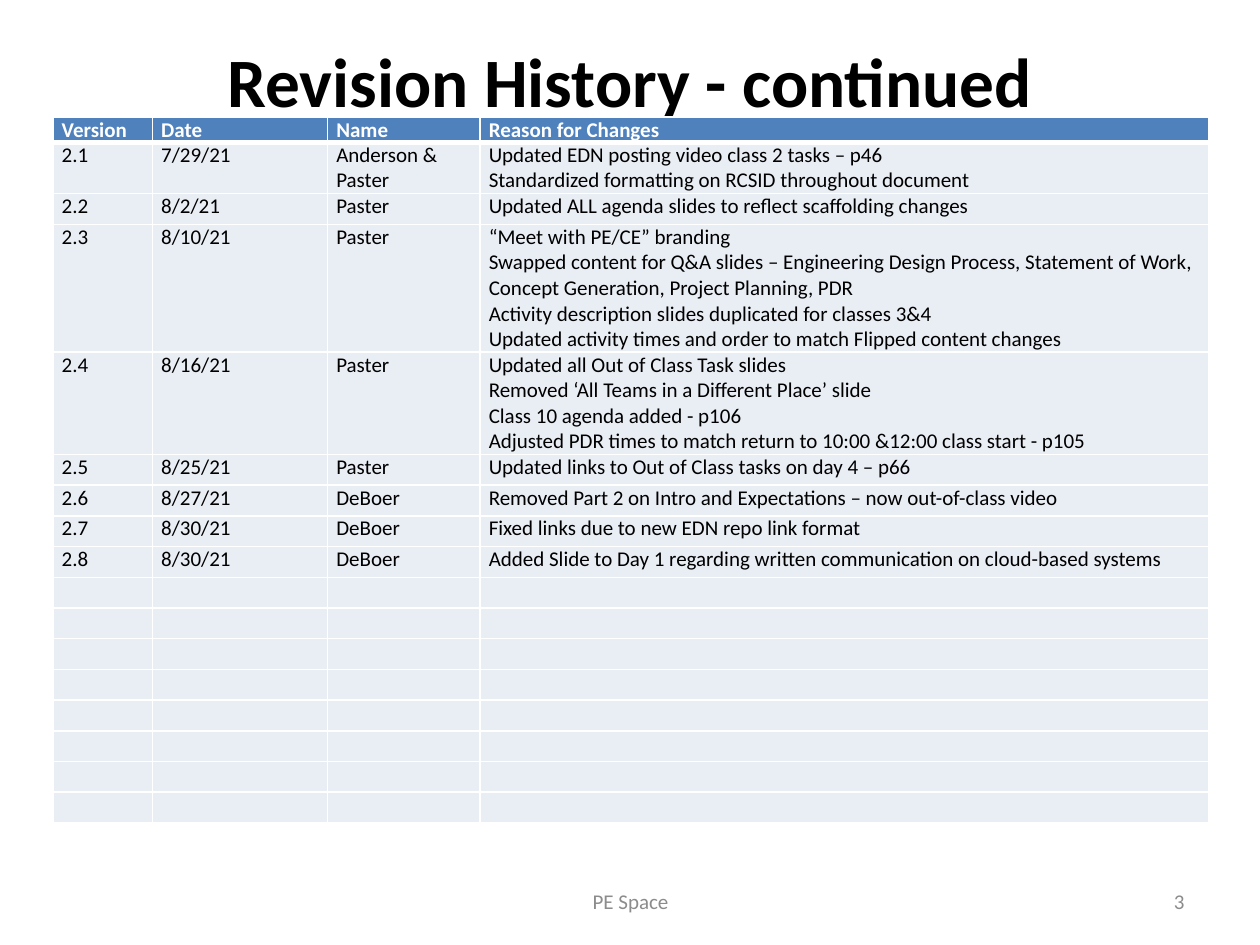
from lxml import etree
from pptx import Presentation
from pptx.dml.color import RGBColor
from pptx.enum.text import MSO_ANCHOR, PP_ALIGN
from pptx.oxml.ns import qn
from pptx.util import Inches, Pt

LEFT, MID, RIGHT = PP_ALIGN.LEFT, PP_ALIGN.CENTER, PP_ALIGN.RIGHT
TOP, CENTER = MSO_ANCHOR.TOP, MSO_ANCHOR.MIDDLE

COLORS = {
    "black": "000000",
    "white": "FFFFFF",
    "head": "4F81BD",
    "body": "E9EDF4",
    "gray": "8C8C8C",
}
WIDTHS = [0.79, 1.39, 1.21, 5.78]
HEAD_H, ROW_H, LINE_H = 0.2, 0.244, 0.203
SPARE = 8  # empty rows left for later versions

HEADS = ("Version", "Date", "Name", "Reason for Changes")
# Each entry: version, date, name, reasons, number of text lines
LOG = [
    ("2.1", "7/29/21", "Anderson & Paster",
     "Updated EDN posting video class 2 tasks – p46\n"
     "Standardized formatting on RCSID throughout document", 2),
    ("2.2", "8/2/21", "Paster",
     "Updated ALL agenda slides to reflect scaffolding changes", 1),
    ("2.3", "8/10/21", "Paster",
     "“Meet with PE/CE” branding\n"
     "Swapped content for Q&A slides – Engineering Design Process, "
     "Statement of Work, Concept Generation, Project Planning, PDR\n"
     "Activity description slides duplicated for classes 3&4\n"
     "Updated activity times and order to match Flipped content changes", 5),
    ("2.4", "8/16/21", "Paster",
     "Updated all Out of Class Task slides\n"
     "Removed ‘All Teams in a Different Place’ slide\n"
     "Class 10 agenda added - p106\n"
     "Adjusted PDR times to match return to 10:00 &12:00 class start - p105", 4),
    ("2.5", "8/25/21", "Paster",
     "Updated links to Out of Class tasks on day 4 – p66", 1),
    ("2.6", "8/27/21", "DeBoer",
     "Removed Part 2 on Intro and Expectations – now out-of-class video", 1),
    ("2.7", "8/30/21", "DeBoer",
     "Fixed links due to new EDN repo link format", 1),
    ("2.8", "8/30/21", "DeBoer",
     "Added Slide to Day 1 regarding written communication on "
     "cloud-based systems", 1),
]


class Page:
    """Holds the text style and the slide being filled."""

    font = "Calibri"
    size = 12

    def __init__(self, slide):
        self.slide = slide

    def style(self, frame, color, size=size, bold=False, align=LEFT):
        for par in frame.paragraphs:
            par.alignment = align
            for run in par.runs:
                font = run.font
                font.name, font.size, font.bold = self.font, Pt(size), bold
                font.color.rgb = RGBColor.from_string(COLORS[color])

    def text(self, words, x, y, w, h, color, align, anchor=CENTER, **look):
        box = self.slide.shapes.add_textbox(
            Inches(x), Inches(y), Inches(w), Inches(h))
        frame = box.text_frame
        frame.word_wrap = True
        frame.vertical_anchor = anchor
        if anchor == TOP:
            frame.margin_top = 0
        frame.text = words
        self.style(frame, color, align=align, **look)

    def edges(self, cell, widths):
        """Draw white borders; widths are points for left, right, top, bottom."""
        props = cell._tc.get_or_add_tcPr()
        for spot, (side, width) in enumerate(zip("LRTB", widths)):
            line = etree.Element(qn(f"a:ln{side}"), w=str(Pt(width)))
            fill = etree.SubElement(line, qn("a:solidFill"))
            etree.SubElement(fill, qn("a:srgbClr"), val=COLORS["white"])
            props.insert(spot, line)

    def cell(self, cell, words, row):
        head = row == 0
        cell.margin_left = cell.margin_right = Inches(0.07)
        cell.margin_top = cell.margin_bottom = 0
        cell.fill.solid()
        cell.fill.fore_color.rgb = RGBColor.from_string(
            COLORS["head" if head else "body"])
        self.edges(cell, (1, 1, 3 if row == 1 else 1, 3 if head else 1))
        if words:
            cell.text_frame.text = words
            self.style(cell.text_frame, "white" if head else "black", bold=head)
        else:  # keeps an empty row as low as a filled one
            par = cell.text_frame.paragraphs[0]
            etree.SubElement(par._p, qn("a:endParaRPr"), sz=str(self.size * 100))

    def table(self, rows, highs, x, y):
        table = self.slide.shapes.add_table(
            len(rows), len(WIDTHS), Inches(x), Inches(y),
            Inches(sum(WIDTHS)), Inches(sum(highs))).table
        table.horz_banding = False
        for col, width in zip(table.columns, WIDTHS):
            col.width = Inches(width)
        for i, (words, high) in enumerate(zip(rows, highs)):
            table.rows[i].height = Inches(high)
            for j, item in enumerate(words):
                self.cell(table.cell(i, j), item, i)


def main():
    deck = Presentation()
    deck.slide_width, deck.slide_height = Inches(10), Inches(7.5)
    page = Page(deck.slides.add_slide(deck.slide_layouts[6]))

    page.text("Revision History - continued", 0.5, 0.3, 9, 1.25,
              "black", MID, TOP, size=39.6, bold=True)
    rows = [HEADS] + [entry[:4] for entry in LOG] + [("",) * 4] * SPARE
    highs = [HEAD_H] + [max(ROW_H, entry[4] * LINE_H) for entry in LOG]
    page.table(rows, highs + [ROW_H] * SPARE, 0.42, 0.93)
    page.text("PE Space", 3.42, 6.95, 3.17, 0.4, "gray", MID)
    page.text("3", 7.17, 6.95, 2.33, 0.4, "gray", RIGHT)

    deck.save("out.pptx")


if __name__ == "__main__":
    main()
